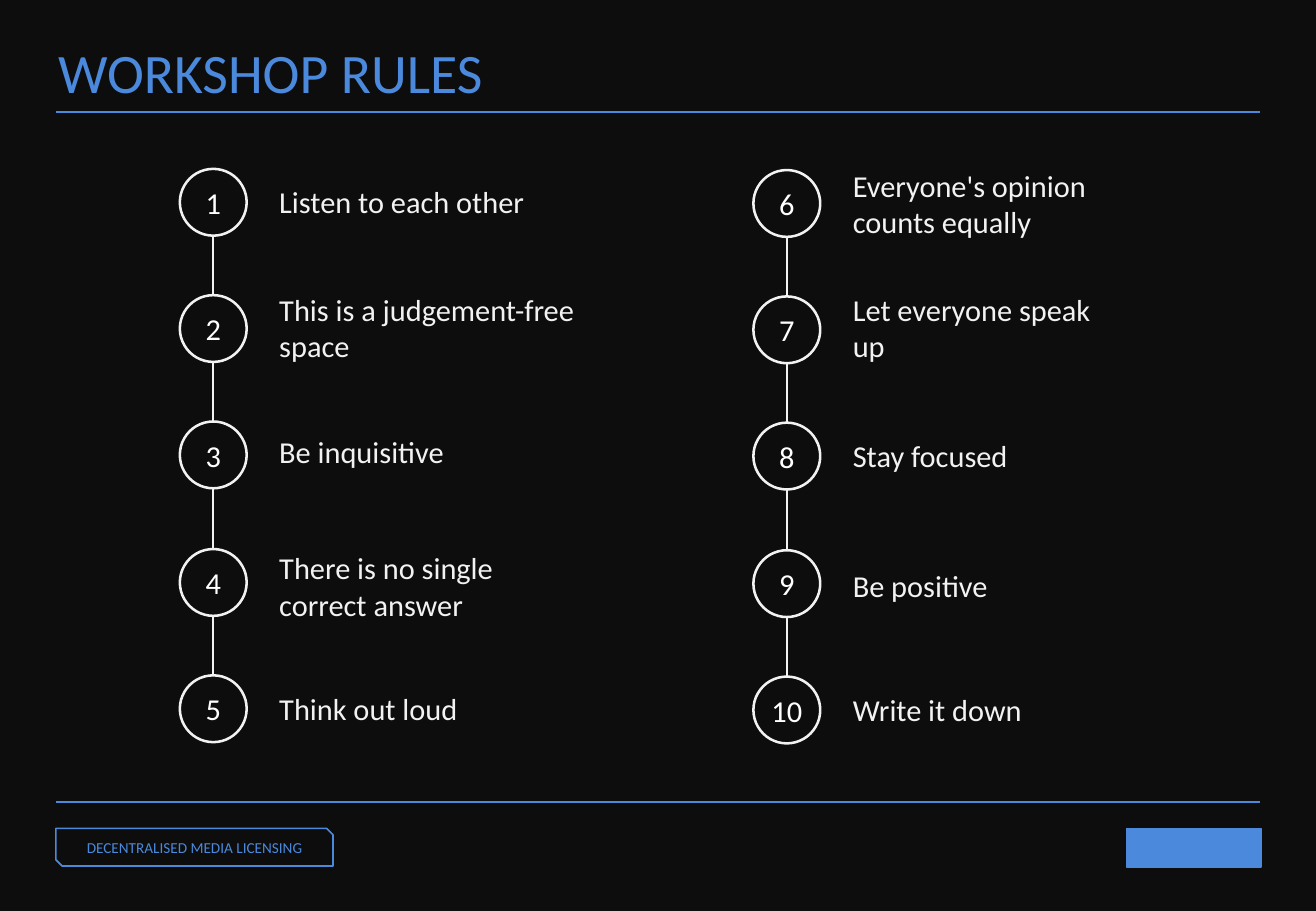
from dataclasses import dataclass
from lxml.etree import SubElement
from pptx import Presentation
from pptx.dml.color import RGBColor
from pptx.enum.shapes import MSO_CONNECTOR, MSO_SHAPE
from pptx.enum.text import MSO_ANCHOR, MSO_AUTO_SIZE, PP_ALIGN
from pptx.oxml.ns import qn
from pptx.util import Emu, Pt


@dataclass(frozen=True)
class Theme:
    background: str = "0D0D0D"
    accent: str = "4A89DC"
    light: str = "F2F2F2"
    number: str = "FFFFFF"
    font: str = "Calibri"
    title_size: int = 33
    body_size: int = 18
    label_size: int = 9
    ring_width: float = 1.5
    line_width: int = 1


THEME = Theme()
EMU_PER_PX = 9144
CIRCLE = 55
PITCH = 104.25
TEXT_OFFSET = 72
LINE_HEIGHT = 31
INSET = 5

COLUMNS = [
    dict(left=148, top=139, text_width=267, first=1, rules=[
        ("Listen to each other", 1, 0),
        ("This is a judgement-free space", 2, 0),
        ("Be inquisitive", 1, -2),
        ("There is no single correct answer", 2, 4),
        ("Think out loud", 1, 0),
    ]),
    dict(left=620, top=140, text_width=243, first=6, rules=[
        ("Everyone's opinion counts equally", 2, 1),
        ("Let everyone speak up", 2, -1),
        ("Stay focused", 1, 0),
        ("Be positive", 1, 2),
        ("Write it down", 1, 0),
    ]),
]


def px(n):
    return Emu(round(n * EMU_PER_PX))


def rgb(value):
    return RGBColor.from_string(value)


def apply(obj, values):
    for name, value in values.items():
        setattr(obj, name, value)


def write(sp, text, size, color, align, frame):
    tf = sp.text_frame
    apply(tf, dict(word_wrap=True) | frame)
    p = tf.paragraphs[0]
    p.alignment = align
    r = p.add_run()
    r.text = text
    apply(r.font, dict(name=THEME.font, size=Pt(size)))
    r.font.color.rgb = rgb(color)


def add_text(s, box, text, size, color):
    sp = s.shapes.add_textbox(*map(px, box))
    write(sp, text, size, color, PP_ALIGN.LEFT,
          dict(auto_size=MSO_AUTO_SIZE.SHAPE_TO_FIT_TEXT))


def add_outline(s, kind, box, color, width, fill=None):
    sp = s.shapes.add_shape(kind, *map(px, box))
    sp.shadow.inherit = False
    if fill:
        sp.fill.solid()
        sp.fill.fore_color.rgb = rgb(fill)
    else:
        sp.fill.background()
    sp.line.color.rgb = rgb(color)
    sp.line.width = Pt(width)
    return sp


def add_line(s, start, end, color):
    cxn = s.shapes.add_connector(MSO_CONNECTOR.STRAIGHT, *map(px, start + end))
    cxn.line.color.rgb = rgb(color)
    cxn.line.width = Pt(THEME.line_width)
    SubElement(cxn._element.spPr, qn("a:effectLst"))


def add_number(s, left, top, number):
    sp = add_outline(s, MSO_SHAPE.OVAL, (left, top, CIRCLE, CIRCLE),
                     THEME.light, THEME.ring_width)
    write(sp, str(number), THEME.body_size, THEME.number, PP_ALIGN.CENTER,
          dict(vertical_anchor=MSO_ANCHOR.MIDDLE, margin_left=0, margin_right=0))


def add_rules(s, left, top, text_width, first, rules):
    tops = [top + round(PITCH * i) for i in range(len(rules))]
    middle = left + CIRCLE / 2
    for i, (y, (text, lines, nudge)) in enumerate(zip(tops, rules)):
        height = lines * LINE_HEIGHT + 2 * INSET
        text_top = y + (CIRCLE - height) / 2 + nudge
        add_number(s, left, y, first + i)
        add_text(s, (left + TEXT_OFFSET, text_top, text_width, height),
                 text, THEME.body_size, THEME.light)
    for above, below in zip(tops, tops[1:]):
        add_line(s, (middle, above + CIRCLE), (middle, below), THEME.light)


def add_footer(s):
    label = add_outline(s, MSO_SHAPE.SNIP_2_DIAG_RECTANGLE, (46, 682, 228, 31),
                        THEME.accent, THEME.line_width)
    write(label, "DECENTRALISED MEDIA LICENSING", THEME.label_size, THEME.accent,
          PP_ALIGN.CENTER, dict(vertical_anchor=MSO_ANCHOR.BOTTOM))
    add_outline(s, MSO_SHAPE.RECTANGLE, (927, 682, 111, 32),
                THEME.accent, THEME.line_width, THEME.accent)


def main():
    prs = Presentation()
    apply(prs, dict(slide_width=px(1083), slide_height=px(750)))
    s = prs.slides.add_slide(prs.slide_layouts[6])
    s.background.fill.solid()
    s.background.fill.fore_color.rgb = rgb(THEME.background)
    add_text(s, (38, 26, 1000, 66), "WORKSHOP RULES", THEME.title_size, THEME.accent)
    for y in (92, 660):
        add_line(s, (46, y), (1037, y), THEME.accent)
    for column in COLUMNS:
        add_rules(s, **column)
    add_footer(s)
    prs.save("out.pptx")


if __name__ == "__main__":
    main()
